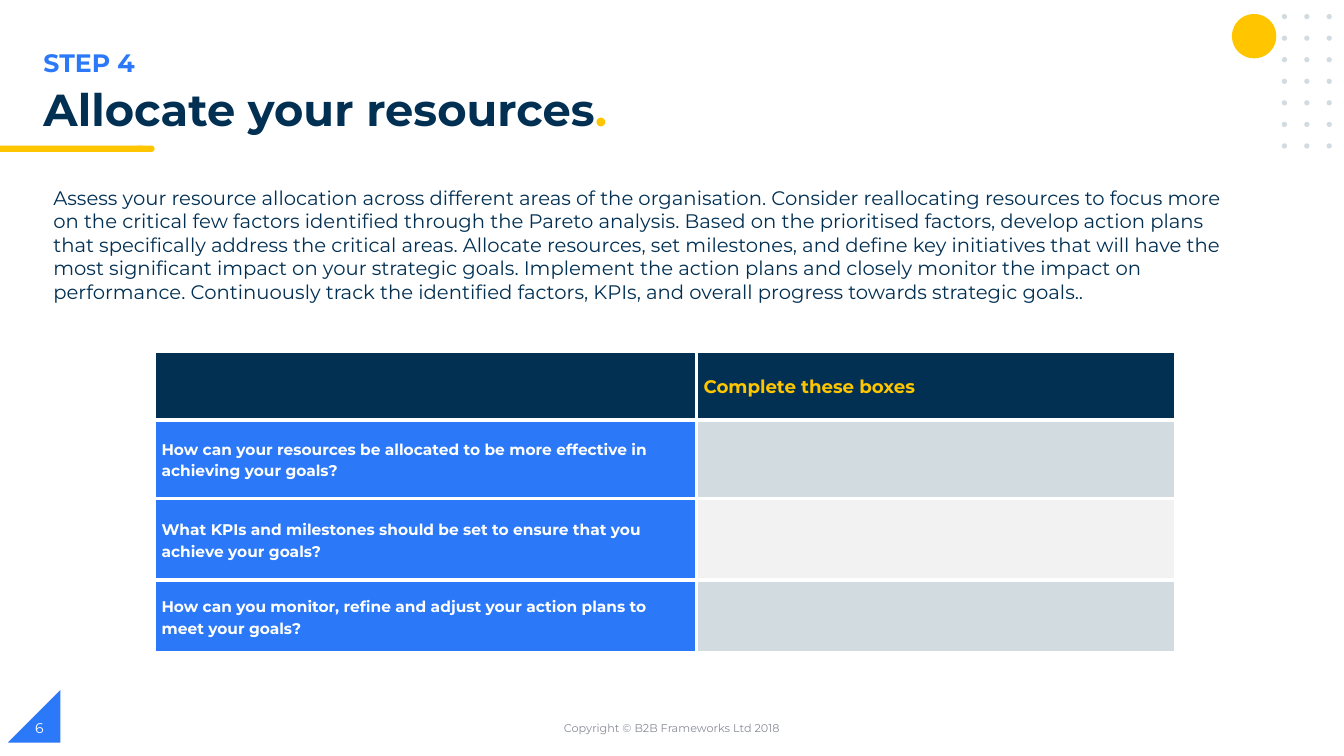
import pptx
import pptx.util
import pptx.dml.color
import pptx.enum.shapes
import pptx.enum.text
import pptx.oxml
import pptx.oxml.ns

Pt = pptx.util.Pt
RGB = pptx.dml.color.RGBColor.from_string
SHAPE = pptx.enum.shapes.MSO_SHAPE
ALIGN = pptx.enum.text.PP_ALIGN
ANCHOR = pptx.enum.text.MSO_ANCHOR

COLORS = {
    "navy": "023053",
    "blue": "2B79F8",
    "yellow": "FFC600",
    "mist": "D1DBE0",
    "pale": "F2F2F2",
    "grey": "888C97",
    "white": "FFFFFF",
}

prs = pptx.Presentation()
prs.slide_width, prs.slide_height = Pt(960), Pt(540)
slide = prs.slides.add_slide(prs.slide_layouts[6])


def write(tf, text, size, color, bold=False, align=ALIGN.LEFT, spacing=None):
    p = tf.paragraphs[0]
    p.alignment = align
    if spacing:
        p.line_spacing = spacing
    r = p.add_run()
    r.text = text
    r.font.name = "Montserrat"
    r.font.size = Pt(size)
    r.font.bold = bold
    r.font.color.rgb = RGB(COLORS[color])


def add_shape(kind, x, y, w, h, color):
    s = slide.shapes.add_shape(kind, Pt(x), Pt(y), Pt(w), Pt(h))
    s.shadow.inherit = False
    s.fill.solid()
    s.fill.fore_color.rgb = RGB(COLORS[color])
    s.line.fill.background()
    return s


corner = add_shape(SHAPE.RIGHT_TRIANGLE, 5.7, 493, 37.4, 37.4, "blue")
corner._element.spPr.find(pptx.oxml.ns.qn("a:xfrm")).set("flipH", "1")
add_shape(SHAPE.FLOWCHART_TERMINATOR, 96.5, 104, 14, 4.5, "yellow")
add_shape(SHAPE.RECTANGLE, 0, 104, 101.5, 4.5, "yellow")
add_shape(SHAPE.OVAL, 880, 10, 31.7, 31.7, "yellow")
for row in range(7):
    for col in range(3):
        add_shape(SHAPE.OVAL, 915.6 + 16 * col, 10 + 15.4 * row, 3.7, 3.7, "mist")

BODY = (
    "Assess your resource allocation across different areas of the organisation. "
    "Consider reallocating resources to focus more on the critical few factors "
    "identified through the Pareto analysis. Based on the prioritised factors, "
    "develop action plans that specifically address the critical areas. Allocate "
    "resources, set milestones, and define key initiatives that will have the most "
    "significant impact on your strategic goals. Implement the action plans and "
    "closely monitor the impact on performance. Continuously track the identified "
    "factors, KPIs, and overall progress towards strategic goals.."
)
title = [
    dict(text="Allocate your resources", size=32, color="navy", bold=True, spacing=0.9),
    dict(text=".", size=32, color="yellow", bold=True, spacing=0.9),
]
footer = dict(text="Copyright © B2B Frameworks Ltd 2018", size=8, color="grey", align=ALIGN.CENTER)
boxes = [
    (24, 30.5, 482, 29, ANCHOR.TOP, [dict(text="STEP 4", size=18, color="blue", bold=True)]),
    (24, 59, 870, 40, ANCHOR.TOP, title),
    (31, 129, 862, 92, ANCHOR.TOP, [dict(text=BODY, size=14, color="navy")]),
    (318, 505.5, 324, 28.8, ANCHOR.MIDDLE, [footer]),
    (18, 505.5, 216, 28.8, ANCHOR.MIDDLE, [dict(text="6", size=10, color="white")]),
]
for x, y, w, h, anchor, runs in boxes:
    tf = slide.shapes.add_textbox(Pt(x), Pt(y), Pt(w), Pt(h)).text_frame
    tf.word_wrap = True
    tf.vertical_anchor = anchor
    for run in runs:
        write(tf, **run)

widths = [387.2, 342.6]
heights = [49, 56.2, 58.4, 51.8]
questions = [
    "How can your resources be allocated to be more effective in achieving your goals?",
    "What KPIs and milestones should be set to ensure that you achieve your goals?",
    "How can you monitor, refine and adjust your action plans to meet your goals?",
]
rows = [[("", "navy"), ("Complete these boxes", "navy")]]
for i, question in enumerate(questions):
    rows.append([(question, "blue"), ("", "pale" if i % 2 else "mist")])

table = slide.shapes.add_table(
    len(rows), len(widths), Pt(110.4), Pt(250.8), Pt(sum(widths)), Pt(sum(heights))
).table
table.horz_banding = False
for column, width in zip(table.columns, widths):
    column.width = Pt(width)
for i, row in enumerate(rows):
    table.rows[i].height = Pt(heights[i])
    for j, (text, fill) in enumerate(row):
        cell = table.cell(i, j)
        cell.vertical_anchor = ANCHOR.MIDDLE
        cell.margin_left = cell.margin_right = Pt(5)
        cell.margin_top = cell.margin_bottom = Pt(0)
        for side in ("lnL", "lnR", "lnT", "lnB"):
            cell._tc.get_or_add_tcPr().append(pptx.oxml.parse_xml(
                f'<a:{side} {pptx.oxml.ns.nsdecls("a")} w="{Pt(3)}"><a:solidFill>'
                f'<a:srgbClr val="{COLORS["white"]}"/></a:solidFill></a:{side}>'
            ))
        cell.fill.solid()
        cell.fill.fore_color.rgb = RGB(COLORS[fill])
        if text:
            size, color = (11, "white") if i else (13, "yellow")
            write(cell.text_frame, text, size, color, bold=True, spacing=1.15)

prs.save("out.pptx")
